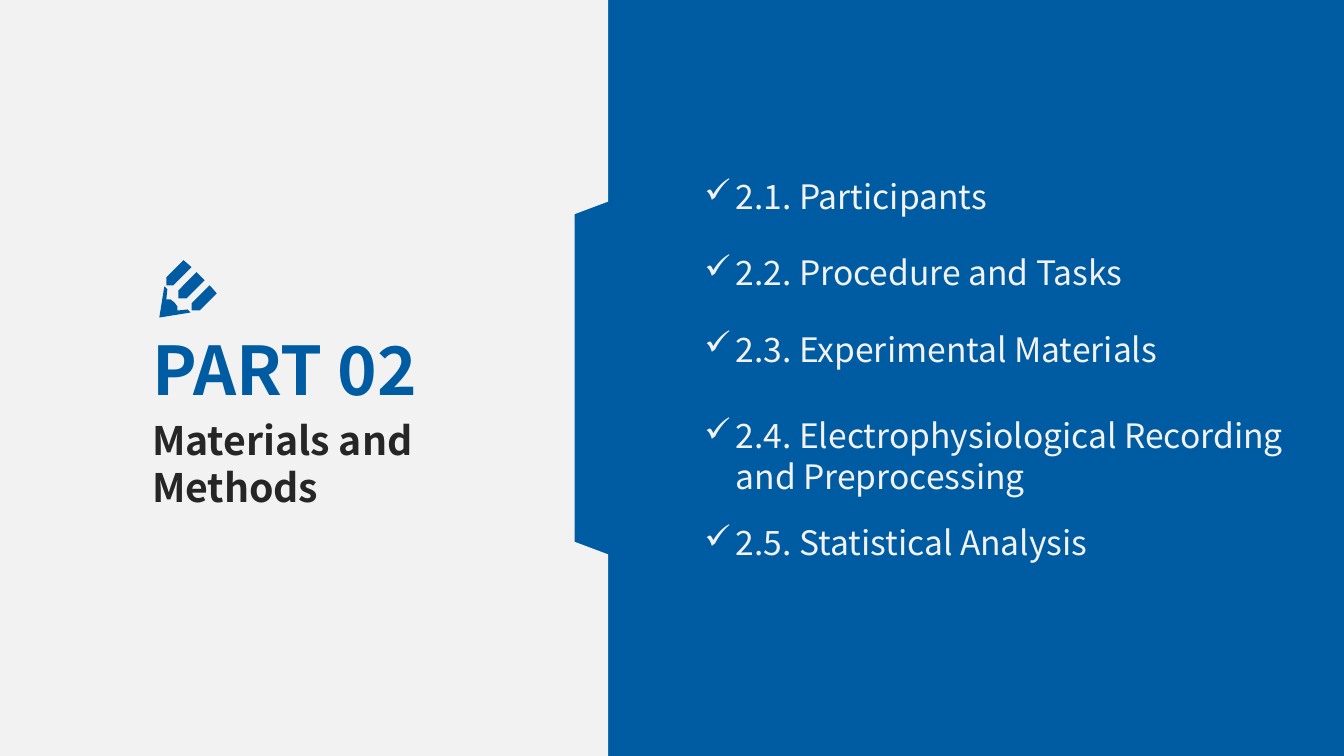
from lxml import etree
from pptx import Presentation
from pptx.dml.color import RGBColor
from pptx.enum.shapes import MSO_SHAPE
from pptx.enum.text import MSO_AUTO_SIZE
from pptx.oxml.ns import qn
from pptx.util import Pt

RECTANGLE = MSO_SHAPE.RECTANGLE
FIT_TEXT = MSO_AUTO_SIZE.SHAPE_TO_FIT_TEXT
BLUE = RGBColor(0x00, 0x5C, 0xA2)
LIGHT = RGBColor(0xF2, 0xF2, 0xF2)
DARK = RGBColor(0x26, 0x26, 0x26)
FONT = "Noto Sans CJK SC"
SLIDE_WIDTH, SLIDE_HEIGHT = 960, 540
PANEL_LEFT = 410.4
NOTCH_WIDTH, NOTCH_HEIGHT = 48, 153
BULLET_INDENT = 22.3


def paint(shape, color):
    """Give a shape a plain fill without outline or shadow."""
    shape.fill.solid()
    shape.fill.fore_color.rgb = color
    shape.line.fill.background()
    shape.shadow.inherit = False


def add_text(text, left, top, width, height, size, color, bold=False):
    box = slide.shapes.add_textbox(Pt(left), Pt(top), Pt(width), Pt(height))
    box.text_frame.word_wrap = True
    box.text_frame.auto_size = FIT_TEXT
    paragraph = box.text_frame.paragraphs[0]
    paragraph.text = text
    font = paragraph.runs[0].font
    font.name = FONT
    font.size = Pt(size)
    font.bold = bold
    font.color.rgb = color
    return paragraph


presentation = Presentation()
presentation.slide_width = Pt(SLIDE_WIDTH)
presentation.slide_height = Pt(SLIDE_HEIGHT)
slide = presentation.slides.add_slide(presentation.slide_layouts[6])
slide.background.fill.solid()
slide.background.fill.fore_color.rgb = LIGHT

# Blue panel with a tab formed by two mirrored light notches
panel = slide.shapes.add_shape(
    RECTANGLE, Pt(PANEL_LEFT), 0, Pt(SLIDE_WIDTH - PANEL_LEFT), Pt(SLIDE_HEIGHT)
)
paint(panel, BLUE)

bottom_notch = [
    (NOTCH_WIDTH / 2, 0),
    (NOTCH_WIDTH, 9),
    (NOTCH_WIDTH, NOTCH_HEIGHT),
    (0, NOTCH_HEIGHT),
    (0, 9),
]
top_notch = [(x, NOTCH_HEIGHT - y) for x, y in bottom_notch]
for points, top in ((bottom_notch, SLIDE_HEIGHT - NOTCH_HEIGHT), (top_notch, 0)):
    builder = slide.shapes.build_freeform(*points[0], scale=Pt(1))
    builder.add_line_segments(points[1:])
    notch = builder.convert_to_shape(Pt(PANEL_LEFT - NOTCH_WIDTH / 2), Pt(top))
    paint(notch, LIGHT)

# Part heading
add_text("Materials and Methods", 101.5, 293.8, 279.4, 74.9, 28, DARK, bold=True)
add_text("PART 02", 101.5, 231.1, 279.4, 65.5, 48, BLUE, bold=True)

# Pencil icon, drawn on a 57 by 57 grid
pencil_parts = [
    [(19, 38), (27, 38), (45, 20), (37, 12), (19, 30)],
    [(32, 7), (24, 0), (7, 17), (7, 25), (14, 25)],
    [(28, 49), (18, 50), (18, 46), (15, 42), (11, 39), (7, 39), (8, 29), (5, 26),
     (0, 57), (31, 52)],
    [(57, 33), (50, 25), (32, 43), (32, 50), (40, 50)],
]
builder = slide.shapes.build_freeform(*pencil_parts[0][0], scale=Pt(0.72))
for index, points in enumerate(pencil_parts):
    if index:
        builder.move_to(*points[0])
    builder.add_line_segments(points[1:])
pencil = builder.convert_to_shape(Pt(113.8), Pt(185.8))
paint(pencil, BLUE)

# Section list
sections = [
    ("2.1. Participants", 122.4, 36),
    ("2.2. Procedure and Tasks", 176.7, 36),
    ("2.3. Experimental Materials", 231.1, 36),
    ("2.4. Electrophysiological Recording and Preprocessing", 293, 65.5),
    ("2.5. Statistical Analysis", 369.4, 36),
]
for title, top, height in sections:
    paragraph = add_text(title, 496.1, top, 463.9, height, 24, LIGHT)
    properties = paragraph._p.get_or_add_pPr()
    properties.set("marL", str(Pt(BULLET_INDENT)))
    properties.set("indent", str(-Pt(BULLET_INDENT)))
    etree.SubElement(properties, qn("a:buChar")).set("char", "✓")

presentation.save("out.pptx")
